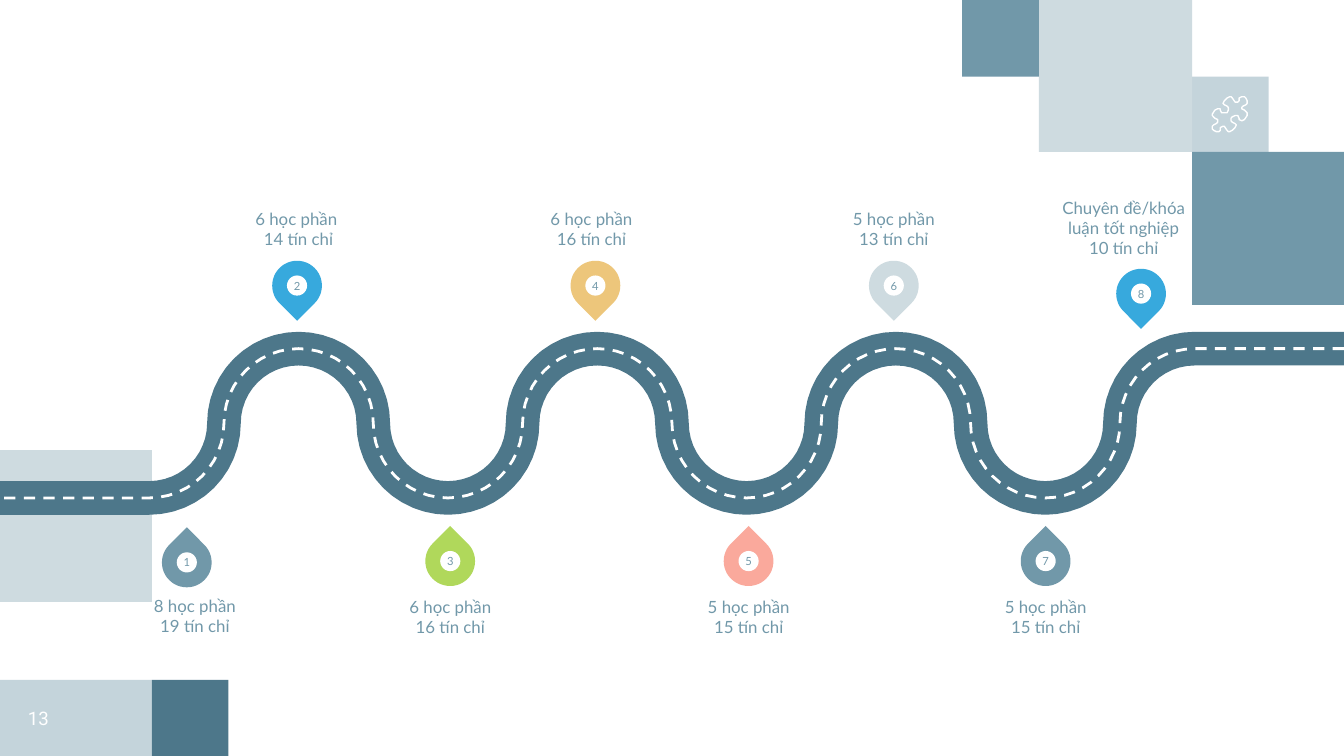
from math import cos, sin, pi
from pptx import Presentation
from pptx.util import Inches, Pt
from pptx.dml.color import RGBColor
from pptx.enum.dml import MSO_LINE as Dash
from pptx.enum.shapes import MSO_SHAPE as Kind
from pptx.enum.text import MSO_ANCHOR as Anchor, PP_ALIGN as Align
from pptx.oxml.ns import qn
from lxml.etree import SubElement

HUES = {
    "steel": "7198A9", "pale": "CEDBE0", "road": "4D778A", "white": "FFFFFF",
    "blue": "37A9DD", "gold": "EDC67B", "pink": "FAA99C", "green": "B0D85B",
}

BLOCKS = [
    (8.87, 1.13, 1.13, 1.14, "steel", 100),
    (8.87, 0.57, 0.57, 0.57, "steel", 41),
    (7.73, 0, 1.14, 1.13, "pale", 100),
    (7.16, 0, 0.57, 0.57, "steel", 100),
    (0, 3.35, 1.13, 1.13, "pale", 100),
    (1.13, 5.06, 0.57, 0.57, "road", 100),
    (0, 5.06, 1.13, 0.57, "steel", 41),
]

PUZZLE = [
    (25, 79), (27, 78), (28, 77), (28, 75), (27, 73), (26, 72), (24, 72),
    (22, 73), (22, 75), (21, 76), (19, 76), (17, 73), (16, 72), (15, 72),
    (13, 73), (11, 75), (10, 77), (11, 78), (13, 79), (14, 80), (14, 82),
    (13, 84), (11, 84), (9, 84), (8, 82), (8, 81), (6, 81), (4, 82),
    (2, 85), (2, 86), (4, 88), (6, 89), (6, 91), (5, 92), (3, 93),
    (2, 94), (2, 96), (3, 97), (5, 98), (7, 98), (8, 97), (8, 95),
    (10, 94), (11, 94), (13, 97), (14, 98), (15, 98), (17, 97), (19, 95),
    (20, 93), (19, 92), (17, 91), (16, 90), (16, 88), (17, 87), (19, 86),
    (21, 86), (22, 88), (22, 89), (24, 90), (26, 89), (28, 86), (28, 84),
    (26, 82), (24, 81), (24, 80),
]

STOPS = [
    ("1", 1.39, 4, "steel", 1.45, 4.43, 0.77, ["8 học phần", "19 tín chỉ"]),
    ("2", 2.21, 1.94, "blue", 2.22, 1.27, 1.41, ["6 học phần ", "14 tín chỉ"]),
    ("3", 3.35, 3.99, "green", 3.35, 4.44, 1.41, ["6 học phần", "16 tín chỉ"]),
    ("4", 4.43, 1.94, "gold", 4.4, 1.27, 1.41, ["6 học phần", "16 tín chỉ"]),
    ("5", 5.57, 3.99, "pink", 5.57, 4.44, 1.41, ["5 học phần", "15 tín chỉ"]),
    ("6", 6.65, 1.94, "pale", 6.65, 1.27, 1.41, ["5 học phần", "13 tín chỉ"]),
    ("7", 7.78, 3.99, "steel", 7.78, 4.44, 1.41, ["5 học phần", "15 tín chỉ"]),
    ("8", 8.49, 2, "blue", 8.36, 1.34, 1.09,
     ["Chuyên đề/khóa luận tốt nghiệp", "10 tín chỉ"]),
]

DROP, DOT, TALL = 0.37, 0.15, 0.58
BENDS, MID, STEPS = 8, 3.15, 24


def hue(name):
    return RGBColor.from_string(HUES[name])


def shape(home, kind, x, y, w, h, fill, alpha=100):
    item = home.add_shape(kind, Inches(x), Inches(y), Inches(w), Inches(h))
    item.shadow.inherit = False
    item.line.fill.background()
    item.fill.solid()
    item.fill.fore_color.rgb = hue(fill)
    if alpha < 100:
        tint = item.fill._xPr.find(".//" + qn("a:srgbClr"))
        SubElement(tint, qn("a:alpha"), val=str(alpha * 1000))
    return item


def write(item, lines, size, font, color, anchor, inset=0):
    frame = item.text_frame
    frame.word_wrap = True
    frame.vertical_anchor = anchor
    frame.margin_left = frame.margin_right = Inches(inset)
    frame.margin_top = frame.margin_bottom = Inches(inset)
    for i, line in enumerate(lines):
        para = frame.add_paragraph() if i else frame.paragraphs[0]
        para.alignment = Align.CENTER
        run = para.add_run()
        run.text = line
        run.font.size = Pt(size)
        run.font.name = font
        run.font.color.rgb = hue(color)


def label(x, y, w, h):
    return shapes.add_textbox(Inches(x), Inches(y), Inches(w), Inches(h))


def trace(points, close, color, width):
    spots = [(Inches(x), Inches(y)) for x, y in points]
    pen = shapes.build_freeform(*spots[0])
    pen.add_line_segments(spots[1:], close=close)
    item = pen.convert_to_shape()
    item.shadow.inherit = False
    item.fill.background()
    item.line.color.rgb = hue(color)
    item.line.width = Pt(width)
    return item


def route():
    gap = 10 / (BENDS + 1)
    rad = gap / 2
    points = [(0, MID + rad)]
    for i in range(BENDS):
        side = -1 if i % 2 else 1
        first = STEPS // 2 if i == 0 else 0
        last = STEPS // 2 if i == BENDS - 1 else STEPS
        for k in range(first, last + 1):
            turn = pi * k / STEPS
            points.append((gap * (i + 1) - rad * cos(turn),
                           MID + side * rad * sin(turn)))
    return (points + [(10, MID - rad)])[::-1]


deck = Presentation()
deck.slide_width, deck.slide_height = Inches(10), Inches(5.625)
slide = deck.slides.add_slide(deck.slide_layouts[6])
shapes = slide.shapes

for x, y, w, h, fill, alpha in BLOCKS:
    shape(shapes, Kind.RECTANGLE, x, y, w, h, fill, alpha)
trace([(9 + x / 100, y / 100) for x, y in PUZZLE], True, "white", 0.75)
write(label(0, 5.06, 0.57, 0.57), ["13"], 10, "Roboto", "white",
      Anchor.MIDDLE, 0.1)

road = route()
trace(road, False, "road", 18)
trace(road, False, "white", 1.5).line.dash_style = Dash.DASH

for num, mid, top, fill, x, y, w, lines in STOPS:
    above = top < MID
    pin = shapes.add_group_shape().shapes
    drop = shape(pin, Kind.TEAR, mid - DROP / 2, top, DROP, DROP, fill)
    drop.rotation = 135 if above else 315
    dot = shape(pin, Kind.OVAL, mid - DOT / 2, top + (DROP - DOT) / 2,
                DOT, DOT, "white")
    write(dot, [num], 6, "Lato", "steel", Anchor.MIDDLE)
    write(label(x - w / 2, y, w, TALL), lines, 9, "Lato", "steel",
          Anchor.BOTTOM if above else Anchor.TOP)

deck.save("out.pptx")
